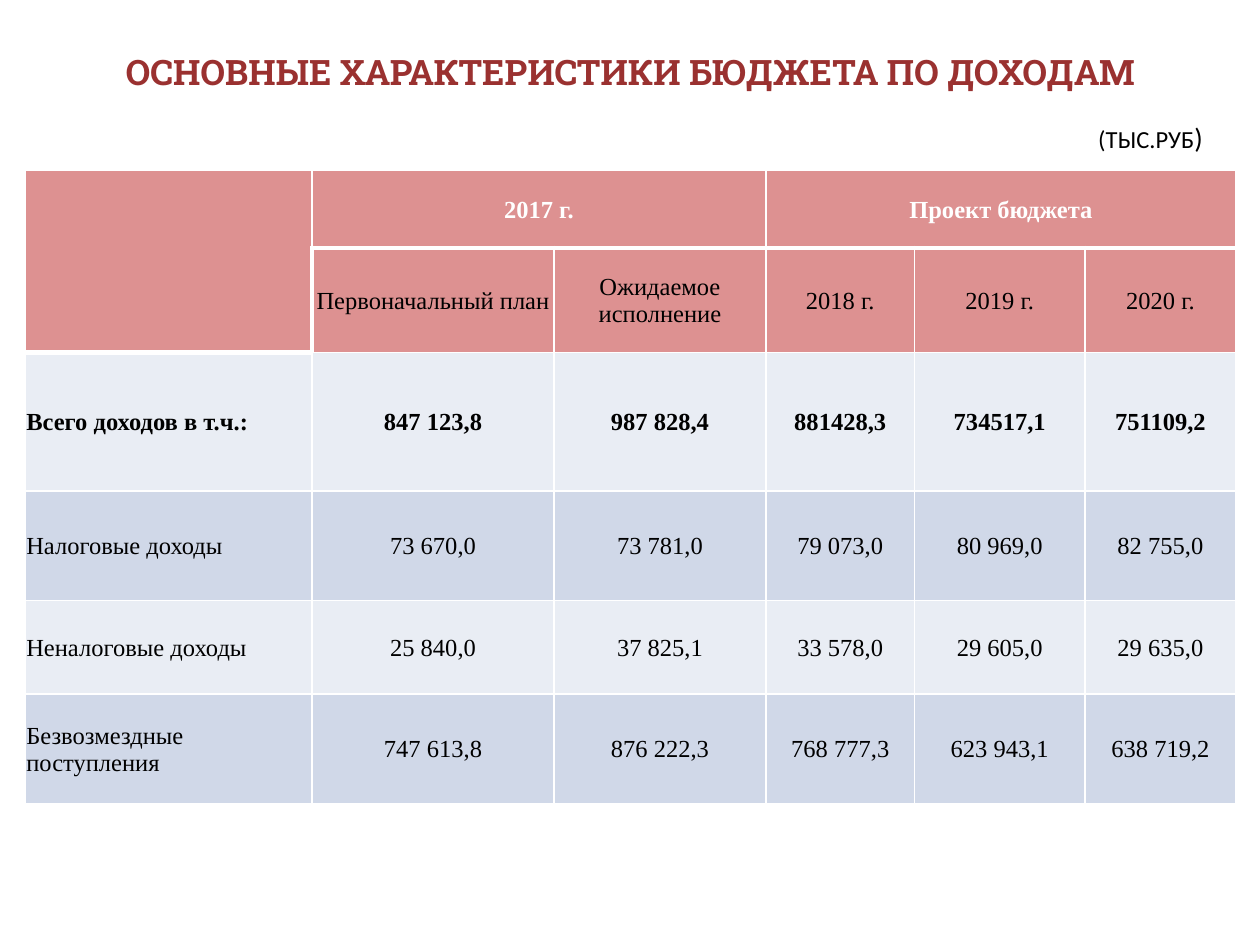
from dataclasses import dataclass

from lxml import etree
from pptx import Presentation
from pptx.dml.color import RGBColor
from pptx.enum.text import MSO_ANCHOR, MSO_AUTO_SIZE, PP_ALIGN
from pptx.oxml.ns import qn
from pptx.util import Cm, Pt

LEFT, CENTER = PP_ALIGN.LEFT, PP_ALIGN.CENTER
MIDDLE = MSO_ANCHOR.MIDDLE
GROW = MSO_AUTO_SIZE.SHAPE_TO_FIT_TEXT
TITLE_ONLY = 5


@dataclass(frozen=True)
class Theme:
    title: str = "9A3130"
    header: str = "DD9191"
    bands: tuple = ("E9EDF4", "D0D8E8")
    white: str = "FFFFFF"
    black: str = "000000"
    title_font: str = "Roboto Slab"
    table_font: str = "Times New Roman"
    unit_font: str = "Calibri"
    title_size: int = 20
    text_size: int = 14
    bracket_size: int = 16
    thin: int = 1
    thick: int = 3


THEME = Theme()

COLUMN_WIDTHS = (5.79, 4.88, 4.27, 3.0, 3.43, 3.05)
ROW_HEIGHTS = (1.57, 2.11, 2.79, 2.21, 1.88, 2.21)
HEADER_ROWS = 2
TOTAL_ROW = 2
BUDGET = (
    ("", "2017 г.", "", "Проект бюджета", "", ""),
    ("", "Первоначальный план", "Ожидаемое исполнение",
     "2018 г.", "2019 г.", "2020 г."),
    ("Всего доходов в т.ч.:", "847 123,8", "987 828,4",
     "881428,3", "734517,1", "751109,2"),
    ("Налоговые доходы", "73 670,0", "73 781,0",
     "79 073,0", "80 969,0", "82 755,0"),
    ("Неналоговые доходы", "25 840,0", "37 825,1",
     "33 578,0", "29 605,0", "29 635,0"),
    ("Безвозмездные поступления", "747 613,8", "876 222,3",
     "768 777,3", "623 943,1", "638 719,2"),
)
# Merged header cells: first and last (row, column)
MERGES = (((0, 0), (1, 0)), ((0, 1), (0, 2)), ((0, 3), (0, 5)))


def set_all(target, values):
    for name, value in values.items():
        setattr(target, name, value)


def style_font(font, face, size, color, bold=False):
    set_all(font, {"name": face, "size": Pt(size), "bold": bold})
    font.color.rgb = RGBColor.from_string(color)


def add_title(slide, text):
    title = slide.shapes.title
    set_all(title, {"left": Cm(1.25), "top": Cm(0.33),
                    "width": Cm(22.86), "height": Cm(2.21)})
    title.text_frame.vertical_anchor = MIDDLE
    heading = title.text_frame.paragraphs[0]
    heading.alignment = CENTER
    run = heading.add_run()
    run.text = text
    style_font(run.font, THEME.title_font, THEME.title_size, THEME.title, True)


def add_unit_note(slide, parts):
    note = slide.shapes.add_textbox(Cm(21.89), Cm(2.31), Cm(3.0), Cm(0.94))
    set_all(note.text_frame, {"word_wrap": True, "auto_size": GROW})
    for text, size in parts:
        run = note.text_frame.paragraphs[0].add_run()
        run.text = text
        style_font(run.font, THEME.unit_font, size, THEME.black)


def border_widths(row, column):
    """Thick rules frame the year headings and the merged corner cell."""
    widths = dict.fromkeys(("lnL", "lnR", "lnT", "lnB"), THEME.thin)
    corner = column == 0
    if row == 0 or (row == 1 and corner):
        widths["lnB"] = THEME.thick
    if (row == 1 and not corner) or (row == 2 and corner):
        widths["lnT"] = THEME.thick
    if (row, column) == (1, 1):
        widths["lnL"] = THEME.thick
    return widths


def draw_borders(cell, widths):
    properties = cell._tc.get_or_add_tcPr()
    for position, (side, width) in enumerate(widths.items()):
        line = etree.Element(qn(f"a:{side}"), w=str(Pt(width)))
        fill = etree.SubElement(line, qn("a:solidFill"))
        etree.SubElement(fill, qn("a:srgbClr"), val=THEME.white)
        properties.insert(position, line)


def fill_cell(cell, row, column, text):
    is_header = row < HEADER_ROWS
    background = THEME.header if is_header else THEME.bands[row % 2]
    cell.fill.solid()
    cell.fill.fore_color.rgb = RGBColor.from_string(background)
    set_all(cell, {"vertical_anchor": MIDDLE, "margin_left": Cm(0.03),
                   "margin_right": Cm(0.03), "margin_top": Cm(0.03),
                   "margin_bottom": 0})
    draw_borders(cell, border_widths(row, column))
    if text:
        cell.text = text
        entry = cell.text_frame.paragraphs[0]
        entry.alignment = LEFT if column == 0 else CENTER
        style_font(entry.runs[0].font, THEME.table_font, THEME.text_size,
                   THEME.white if row == 0 else THEME.black,
                   row in (0, TOTAL_ROW))


def add_budget_table(slide):
    budget = slide.shapes.add_table(
        len(ROW_HEIGHTS), len(COLUMN_WIDTHS), Cm(0.5), Cm(3.43),
        Cm(sum(COLUMN_WIDTHS)), Cm(sum(ROW_HEIGHTS))).table
    for column, width in zip(budget.columns, COLUMN_WIDTHS):
        column.width = Cm(width)
    for row, height in zip(budget.rows, ROW_HEIGHTS):
        row.height = Cm(height)
    for first, last in MERGES:
        budget.cell(*first).merge(budget.cell(*last))
    for row, entries in enumerate(BUDGET):
        for column, text in enumerate(entries):
            fill_cell(budget.cell(row, column), row, column, text)


def main():
    deck = Presentation()
    set_all(deck, {"slide_width": Cm(25.4), "slide_height": Cm(19.05)})
    slide = deck.slides.add_slide(deck.slide_layouts[TITLE_ONLY])

    # Heading and unit of measure
    add_title(slide, "ОСНОВНЫЕ ХАРАКТЕРИСТИКИ БЮДЖЕТА ПО ДОХОДАМ")
    add_unit_note(slide, (("(ТЫС.РУБ", THEME.text_size),
                          (")", THEME.bracket_size)))

    # Revenue by source and year
    add_budget_table(slide)
    deck.save("out.pptx")


if __name__ == "__main__":
    main()
